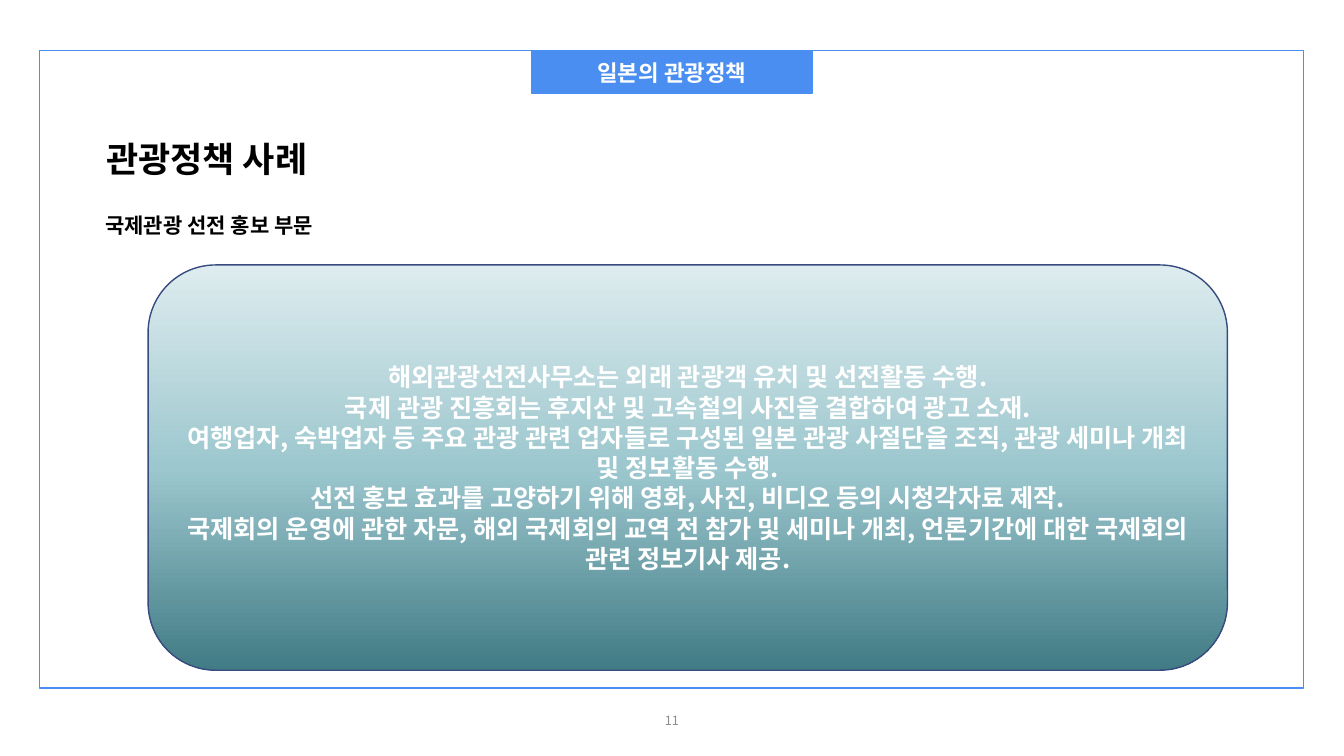
"""Build the slide on Japan's tourism policy cases."""
from copy import deepcopy

from lxml.etree import SubElement
from pptx import Presentation
from pptx.dml.color import RGBColor
from pptx.enum.shapes import MSO_SHAPE as SHAPE
from pptx.enum.text import MSO_ANCHOR as ANCHOR, MSO_AUTO_SIZE as AUTO_SIZE, PP_ALIGN as ALIGN
from pptx.oxml.ns import qn
from pptx.util import Pt

FONT = "Noto Sans CJK KR"
BLUE = RGBColor(0x4A, 0x8E, 0xF2)
NAVY = RGBColor(0x37, 0x4B, 0x7F)
BLACK = RGBColor(0, 0, 0)
WHITE = RGBColor(0xFF, 0xFF, 0xFF)
GRAY = RGBColor(0x8C, 0x8C, 0x8C)
TEAL_STOPS = [
    (0, RGBColor(0xDE, 0xEC, 0xEF)),
    (0.5, RGBColor(0x9C, 0xC7, 0xCE)),
    (1, RGBColor(0x41, 0x7B, 0x85)),
]
POLICIES = [
    "해외관광선전사무소는 외래 관광객 유치 및 선전활동 수행.",
    "국제 관광 진흥회는 후지산 및 고속철의 사진을 결합하여 광고 소재.",
    "여행업자, 숙박업자 등 주요 관광 관련 업자들로 구성된 일본 관광 사절단을 조직, 관광 세미나 개최 및 정보활동 수행.",
    "선전 홍보 효과를 고양하기 위해 영화, 사진, 비디오 등의 시청각자료 제작.",
    "국제회의 운영에 관한 자문, 해외 국제회의 교역 전 참가 및 세미나 개최, 언론기간에 대한 국제회의 관련 정보기사 제공.",
]


def write(box, *lines, size, color, bold=True, align=ALIGN.CENTER, anchor=ANCHOR.MIDDLE, grow=False):
    frame = box.text_frame
    frame.word_wrap = True
    frame.vertical_anchor = anchor
    if grow:
        frame.auto_size = AUTO_SIZE.SHAPE_TO_FIT_TEXT
    for index, line in enumerate(lines):
        para = frame.add_paragraph() if index else frame.paragraphs[0]
        para.alignment = align
        span = para.add_run()
        span.text = line
        span.font.size = Pt(size)
        span.font.bold = bold
        span.font.color.rgb = color
        span.font.name = FONT
        SubElement(span._r.get_or_add_rPr(), qn("a:ea")).set("typeface", FONT)


def add_box(kind, left, top, width, height, line):
    box = page.shapes.add_shape(kind, Pt(left), Pt(top), Pt(width), Pt(height))
    box.shadow.inherit = False
    box.line.color.rgb = line
    box.line.width = Pt(1)
    return box


deck = Presentation()
deck.slide_width, deck.slide_height = Pt(960), Pt(540)
page = deck.slides.add_slide(deck.slide_layouts[6])

page_number = page.shapes.add_textbox(Pt(372), Pt(500.5), Pt(216), Pt(28.75))
write(page_number, "11", size=9, color=GRAY, bold=False)

subtitle = page.shapes.add_textbox(Pt(43.2), Pt(148.3), Pt(212.4), Pt(25.2))
write(subtitle, "국제관광 선전 홍보 부문", size=15, color=BLACK, anchor=ANCHOR.TOP, grow=True)

tab = add_box(SHAPE.RECTANGLE, 380, 36, 200, 31, BLUE)
tab.fill.solid()
tab.fill.fore_color.rgb = BLUE
write(tab, "일본의 관광정책", size=16, color=WHITE)

border = add_box(SHAPE.RECTANGLE, 28.25, 36, 903, 455.5, BLUE)
border.fill.background()

title = page.shapes.add_textbox(Pt(69), Pt(95), Pt(843), Pt(37.5))
write(title, "관광정책 사례", size=25, color=BLACK, align=ALIGN.JUSTIFY, anchor=ANCHOR.TOP, grow=True)

panel = add_box(SHAPE.ROUNDED_RECTANGLE, 105.75, 189.25, 771, 289.5, NAVY)
panel.fill.gradient()
panel.fill.gradient_angle = 270
stop_list = panel._element.spPr.find(".//" + qn("a:gsLst"))
stop_list.append(deepcopy(stop_list[-1]))
for stop, (position, color) in zip(panel.fill.gradient_stops, TEAL_STOPS):
    stop.position = position
    stop.color.rgb = color
write(panel, *POLICIES, size=18, color=WHITE)

deck.save("out.pptx")
